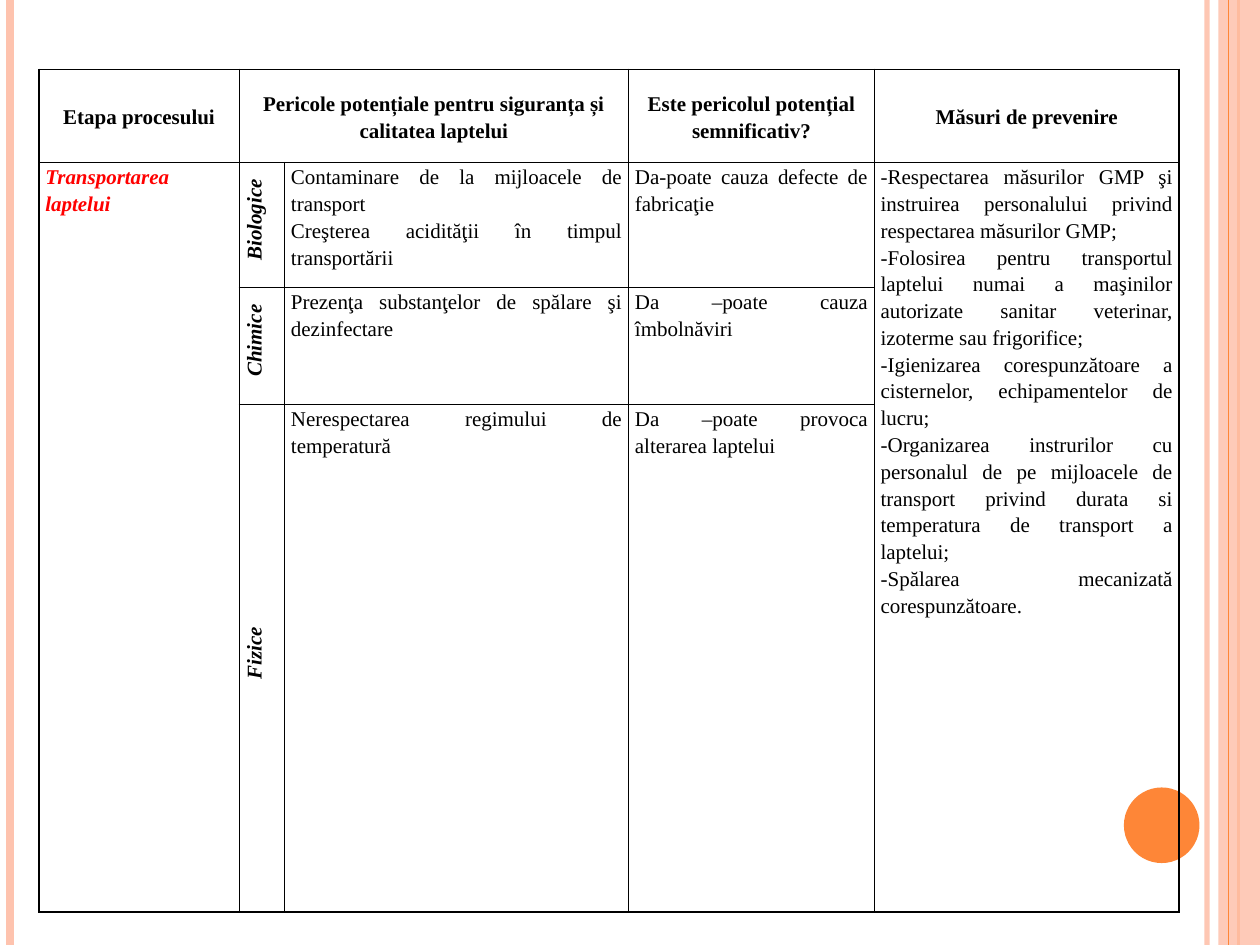
from lxml.etree import SubElement
from pptx import Presentation
from pptx.dml.color import RGBColor
from pptx.enum.shapes import MSO_CONNECTOR, MSO_SHAPE as Shape
from pptx.enum.text import MSO_ANCHOR as Anchor, PP_ALIGN as Align
from pptx.oxml.ns import qn
from pptx.util import Inches, Pt

PEACH, ORANGE, BLACK, RED = "FEC3AE", "FE8637", "000000", "FF0000"
COLUMNS = [1.59, 0.36, 2.73, 1.95, 2.42]
ROWS = [0.74, 0.99, 0.93, 4.03]
STRIPES = [(9.58, PEACH, 3, 93), (0.08, PEACH, 4.5, 100), (9.83, ORANGE, 1.5, 100)]
HEADINGS = {
    0: "Etapa procesului",
    1: "Pericole potențiale pentru siguranța și calitatea laptelui",
    3: "Este pericolul potențial semnificativ?",
    4: "Măsuri de prevenire",
}
HAZARDS = [
    ("Biologice",
     ["Contaminare de la mijloacele de transport",
      "Creşterea acidităţii în timpul transportării"],
     "Da-poate cauza defecte de fabricaţie"),
    ("Chimice",
     ["Prezenţa substanţelor de spălare şi dezinfectare"],
     "Da –poate cauza îmbolnăviri"),
    ("Fizice",
     ["Nerespectarea regimului de temperatură"],
     "Da –poate provoca alterarea laptelui"),
]
MEASURES = [
    "-Respectarea măsurilor GMP şi instruirea personalului privind respectarea măsurilor GMP;",
    "-Folosirea pentru transportul laptelui numai a maşinilor autorizate sanitar veterinar, "
    "izoterme sau frigorifice;",
    "-Igienizarea corespunzătoare a cisternelor, echipamentelor de lucru;",
    "-Organizarea instrurilor cu personalul de pe mijloacele de transport privind durata si "
    "temperatura de transport a laptelui;",
    "-Spălarea mecanizată corespunzătoare.",
]


def rgb(value):
    """Turn a hex string into a colour."""
    return RGBColor.from_string(value)


def set_opacity(element, percent):
    """Make the solid colour inside an element partly transparent."""
    for color in element.iter(qn("a:srgbClr")):
        SubElement(color, qn("a:alpha"), val=str(percent * 1000))


def add_stripe(page, x, color, width, opacity=100):
    """Draw a full-height vertical line."""
    line = page.shapes.add_connector(
        MSO_CONNECTOR.STRAIGHT, Inches(x), 0, Inches(x), Inches(7.5))
    line.line.color.rgb = rgb(color)
    line.line.width = Pt(width)
    properties = line._element.spPr
    SubElement(properties, qn("a:effectLst"))
    if opacity < 100:
        set_opacity(properties, opacity)


def add_block(page, kind, left, top, width, height, color, opacity=100):
    """Draw a filled shape without an outline."""
    block = page.shapes.add_shape(
        kind, Inches(left), Inches(top), Inches(width), Inches(height))
    block.shadow.inherit = False
    block.fill.solid()
    block.fill.fore_color.rgb = rgb(color)
    block.line.fill.background()
    if opacity < 100:
        set_opacity(block._element.spPr, opacity)


def border_width(row, column, side):
    """Give thin lines between hazards and thick ones elsewhere."""
    between_rows = 1 <= column <= 3 and (side, row) in {
        ("B", 1), ("B", 2), ("T", 2), ("T", 3)}
    between_columns = row > 0 and (side, column) in {("R", 1), ("L", 2)}
    return 0.5 if between_rows or between_columns else 1


def format_cell(cell, row, column):
    """Give a cell its borders, margins and empty fill."""
    properties = cell._tc.get_or_add_tcPr()
    for side in "LRTB":
        width = Pt(border_width(row, column, side))
        line = SubElement(properties, qn(f"a:ln{side}"), w=str(width))
        SubElement(SubElement(line, qn("a:solidFill")), qn("a:srgbClr"), val=BLACK)
    cell.fill.background()
    margins = {"margin_left": 0.05, "margin_right": 0.05,
               "margin_top": 0, "margin_bottom": 0}
    for name, value in margins.items():
        setattr(cell, name, Inches(value))


def write_cell(cell, lines, align=Align.JUSTIFY, color=BLACK, **styles):
    """Write one paragraph per line in a cell."""
    frame = cell.text_frame
    font = {"name": "Times New Roman", "size": Pt(12), "bold": False,
            "italic": False, **styles}
    for index, text in enumerate(lines):
        para = frame.add_paragraph() if index else frame.paragraphs[0]
        para.alignment = align
        para.line_spacing = 1.15
        span = para.add_run()
        span.text = text
        for name, value in font.items():
            setattr(span.font, name, value)
        span.font.color.rgb = rgb(color)


def write_upright(cell, text):
    """Write a centred label that reads from bottom to top."""
    write_cell(cell, [text], Align.CENTER, bold=True, italic=True)
    cell.vertical_anchor = Anchor.MIDDLE
    cell._tc.get_or_add_tcPr().set("vert", "vert270")
    para = cell.text_frame.paragraphs[0]
    para._p.get_or_add_pPr().set("marL", str(Inches(0.08)))


def add_hazard_table(page):
    """Build the table of hazards and preventive measures."""
    table = page.shapes.add_table(
        len(ROWS), len(COLUMNS), Inches(0.31), Inches(0.55),
        Inches(sum(COLUMNS)), Inches(sum(ROWS))).table
    table.first_row = table.horz_banding = False
    for column, width in zip(table.columns, COLUMNS):
        column.width = Inches(width)
    for row, height in zip(table.rows, ROWS):
        row.height = Inches(height)
    for row in range(len(ROWS)):
        for column in range(len(COLUMNS)):
            format_cell(table.cell(row, column), row, column)
    table.cell(0, 1).merge(table.cell(0, 2))
    for column in (0, 4):
        table.cell(1, column).merge(table.cell(3, column))

    for column, text in HEADINGS.items():
        heading = table.cell(0, column)
        write_cell(heading, [text], Align.CENTER, bold=True)
        heading.vertical_anchor = Anchor.MIDDLE
    write_cell(table.cell(1, 0), ["Transportarea laptelui"],
               color=RED, bold=True, italic=True)
    write_cell(table.cell(1, 4), MEASURES)
    for row, (kind, dangers, answer) in enumerate(HAZARDS, 1):
        write_upright(table.cell(row, 1), kind)
        write_cell(table.cell(row, 2), dangers)
        write_cell(table.cell(row, 3), [answer])


def main():
    """Build the slide and save it."""
    deck = Presentation()
    deck.slide_width, deck.slide_height = Inches(10), Inches(7.5)
    page = deck.slides.add_slide(deck.slide_layouts[6])
    for stripe in STRIPES:
        add_stripe(page, *stripe)
    add_block(page, Shape.RECTANGLE, 9.67, 0, 0.33, 7.5, PEACH, 87)
    add_stripe(page, 9.75, ORANGE, 0.75)
    add_block(page, Shape.OVAL, 8.92, 6.25, 0.6, 0.6, ORANGE)
    add_hazard_table(page)
    deck.save("out.pptx")


if __name__ == "__main__":
    main()
